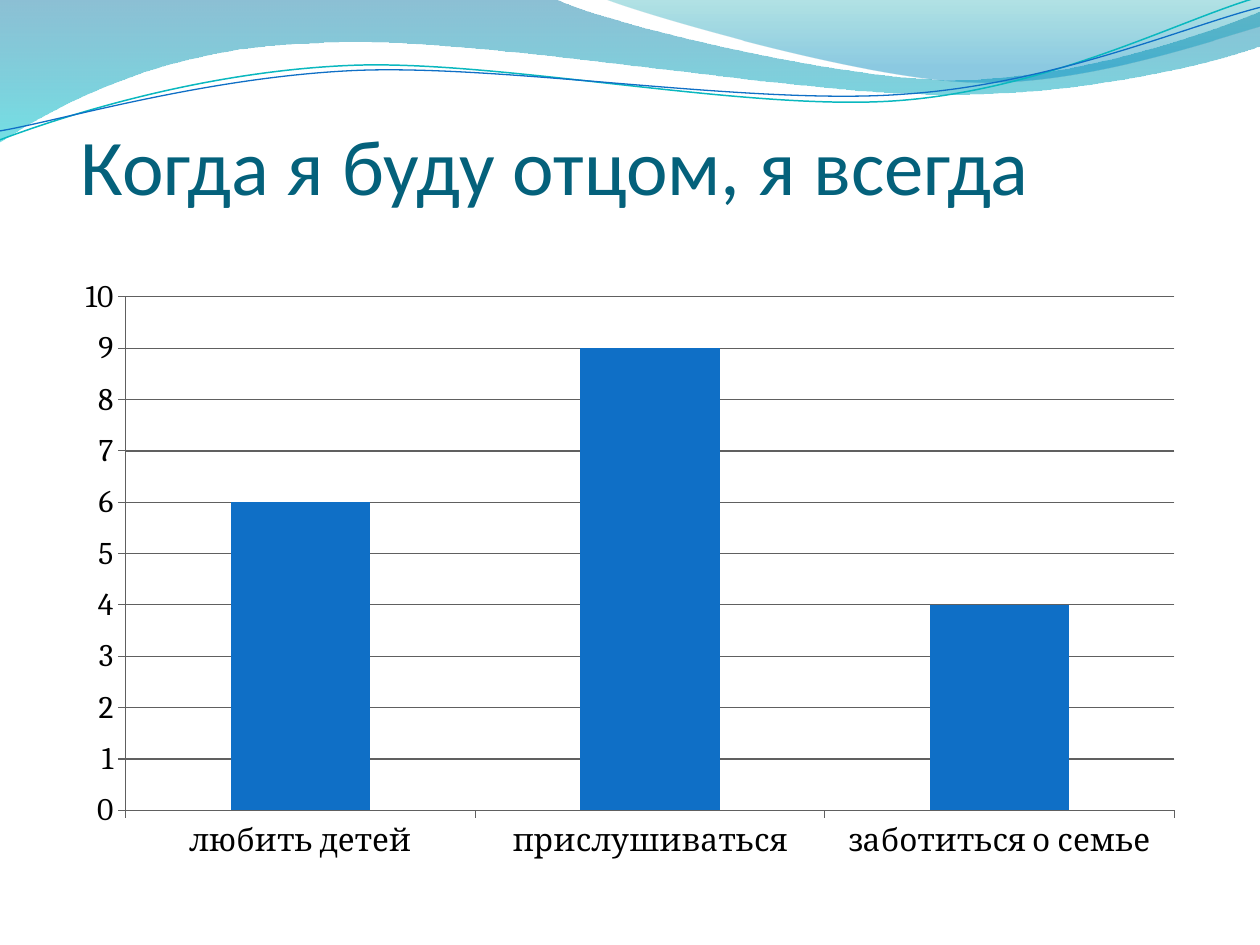
from lxml.etree import SubElement
from pptx import Presentation
from pptx.chart.data import CategoryChartData
from pptx.dml.color import RGBColor
from pptx.enum.chart import XL_CHART_TYPE as ChartType, XL_TICK_MARK as Tick
from pptx.enum.text import MSO_ANCHOR as Anchor
from pptx.oxml.ns import qn
from pptx.util import Cm, Pt

BLACK = RGBColor(0x00, 0x00, 0x00)
GREY = RGBColor(0x60, 0x60, 0x60)
TITLE = RGBColor(0x04, 0x61, 0x7B)
BLUE = RGBColor(0x0F, 0x6F, 0xC6)
TURQUOISE = RGBColor(0x0A, 0xB8, 0xBF)
BACK_TOP = RGBColor(0x00, 0x74, 0xA1)
BACK_BOTTOM = RGBColor(0x00, 0xC6, 0xCF)
FRONT_TOP = RGBColor(0x00, 0xA1, 0xA9)
FRONT_BOTTOM = RGBColor(0x00, 0x8B, 0xBF)

# Outlines in cm: a pair is a corner, six numbers are a Bézier segment.
BACK_WAVE = [
    (0, 0), (11.18, -0.03),
    (12.09, 0.43, 16.87, 1.6, 19.25, 1.6),
    (21.67, 1.6, 24.33, 0.66, 25.4, 0.23),
    (25.43, 0.91),
    (24.97, 1.12, 22.1, 1.93, 18.95, 1.9),
    (15.8, 1.9, 9.7, 0.71, 6.53, 0.86),
    (3.28, 0.91, 1.17, 2.11, -0.03, 2.87),
]
FRONT_WAVE = [
    (12.17, -0.03),
    (12.93, 0.28, 17.32, 1.57, 19.53, 1.65),
    (21.74, 1.75, 24.41, 0.81, 25.4, 0.53),
    (25.4, 0),
]
TURQUOISE_LINE = [
    (0, 2.82),
    (1.22, 2.36, 4.01, 1.45, 7.04, 1.32),
    (10.03, 1.19, 15.06, 2.26, 18.11, 2.03),
    (21.16, 1.8, 23.83, 0.38, 25.35, -0.05),
]
BLUE_LINE = [
    (0, 2.64),
    (1.19, 2.44, 4.17, 1.55, 7.19, 1.42),
    (10.24, 1.3, 15.16, 2.13, 18.21, 1.9),
    (21.23, 1.7, 23.9, 0.53, 25.4, 0.15),
]


def add_outline(slide, left, top, outline, close):
    """Build the outline from its end points, then bend the Bézier segments."""
    ends = [(left + Cm(seg[-2]), top + Cm(seg[-1])) for seg in outline]
    builder = slide.shapes.build_freeform(*ends[0])
    builder.add_line_segments(ends[1:], close=close)
    sp = builder.convert_to_shape()
    sp.shadow.inherit = False
    segments = list(sp._element.spPr.iter(qn("a:lnTo")))
    for node, seg in zip(segments, outline[1:]):
        if len(seg) == 2:
            continue
        node.tag = qn("a:cubicBezTo")
        for i in (0, 1):
            x = left + Cm(seg[2 * i]) - sp.left
            y = top + Cm(seg[2 * i + 1]) - sp.top
            pt = SubElement(node, qn("a:pt"), x=str(x), y=str(y))
            node.insert(i, pt)
    return sp


def add_wave(slide, left, top, outline, stops):
    """Draw a filled wave; stops are (position, colour, opacity percent)."""
    sp = add_outline(slide, left, top, outline, True)
    sp.line.fill.background()
    sp.fill.gradient()
    sp.fill.gradient_angle = 270
    for stop, (position, color, _) in zip(sp.fill.gradient_stops, stops):
        stop.position = position
        stop.color.rgb = color
    colors = sp._element.spPr.iter(qn("a:srgbClr"))
    for clr, (_, _, opacity) in zip(colors, stops):
        SubElement(clr, qn("a:alpha"), val=str(opacity * 1000))


def add_wave_line(slide, left, top, outline, color, width):
    sp = add_outline(slide, left, top, outline, False)
    sp.fill.background()
    sp.line.color.rgb = color
    sp.line.width = Pt(width)


def add_header(slide, left, top):
    add_wave(slide, left, top, BACK_WAVE,
             [(0, BACK_TOP, 45), (1, BACK_BOTTOM, 55)])
    add_wave(slide, left, top, FRONT_WAVE,
             [(0, FRONT_TOP, 30), (0.8, FRONT_BOTTOM, 45)])
    add_wave_line(slide, left, top, TURQUOISE_LINE, TURQUOISE, 0.85)
    add_wave_line(slide, left, top, BLUE_LINE, BLUE, 0.75)


def add_title(slide, left, top, width, height):
    tf = slide.shapes.add_textbox(left, top, width, height).text_frame
    tf.word_wrap = True
    tf.vertical_anchor = Anchor.BOTTOM
    tf.margin_left, tf.margin_right = Cm(0.36), 0
    tf.margin_top, tf.margin_bottom = Cm(0.13), Cm(2)
    p = tf.paragraphs[0]
    p.text = "Когда я буду отцом, я всегда"
    p.font.name = "Calibri"
    p.font.size = Pt(45)
    p.font.color.rgb = TITLE


def style_line(line):
    line.color.rgb = GREY
    line.width = Pt(0.75)


def add_answers_chart(slide, left, top, width, height):
    data = CategoryChartData()
    data.categories = ["любить детей", "прислушиваться", "заботиться о семье"]
    data.add_series("Series 1", (6, 9, 4))
    chart = slide.shapes.add_chart(ChartType.COLUMN_CLUSTERED, left, top,
                                   width, height, data).chart
    chart.has_legend = False
    chart.has_title = False
    chart.font.name = "Cambria"
    chart.font.size = Pt(18)
    chart.font.color.rgb = BLACK

    plot = chart.plots[0]
    plot.gap_width = 150
    plot.vary_by_categories = False
    fill = plot.series[0].format.fill
    fill.solid()
    fill.fore_color.rgb = BLUE

    for axis in (chart.category_axis, chart.value_axis):
        axis.major_tick_mark = Tick.OUTSIDE
        axis.minor_tick_mark = Tick.NONE
        style_line(axis.format.line)
    values = chart.value_axis
    values.minimum_scale, values.maximum_scale, values.major_unit = 0, 10, 1
    values.has_major_gridlines = True
    style_line(values.major_gridlines.format.line)


def main():
    prs = Presentation()
    prs.slide_width, prs.slide_height = Cm(25.4), Cm(19.05)
    slide = prs.slides.add_slide(prs.slide_layouts[6])
    margin = Cm(1.27)
    content_width = prs.slide_width - 2 * margin
    add_header(slide, 0, 0)
    add_title(slide, margin, Cm(1.96), content_width, Cm(4.19))
    add_answers_chart(slide, margin, Cm(5.37), content_width, Cm(12.2))
    prs.save("out.pptx")


if __name__ == "__main__":
    main()
